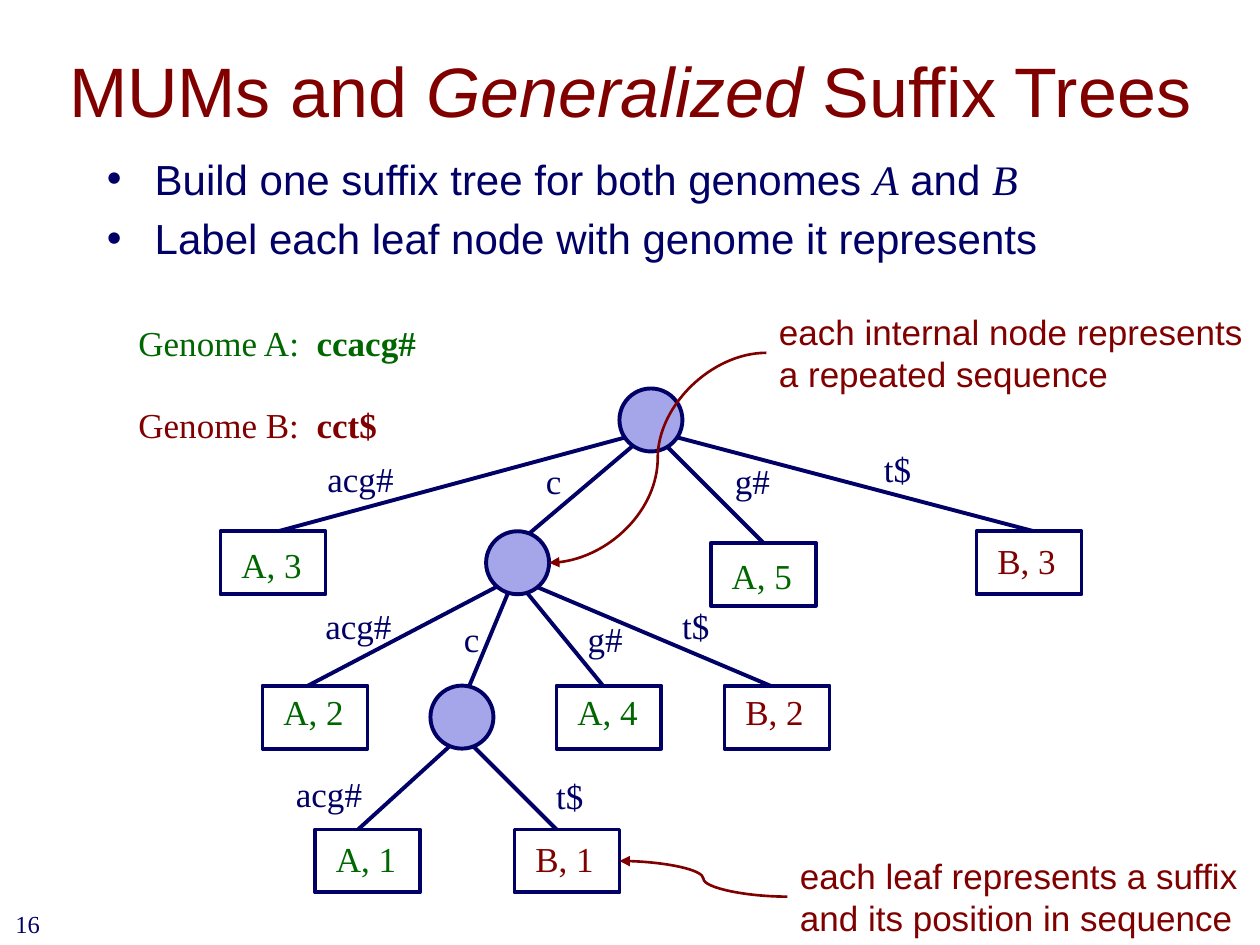
"""Build a slide showing a generalized suffix tree for two genomes."""
from lxml import etree
from pptx import Presentation, util as u
from pptx.dml.color import RGBColor
from pptx.enum import shapes, text
from pptx.oxml.ns import qn

COLORS = {"navy": "000066", "maroon": "800000", "green": "006600",
          "node": "A5A5E9", "white": "FFFFFF"}
COLORS = {name: RGBColor.from_string(value) for name, value in COLORS.items()}
SANS, SERIF = "Arial", "Times New Roman"

presentation = Presentation()
presentation.slide_width, presentation.slide_height = u.Inches(10), u.Inches(7.5)
CELL = presentation.slide_width / 120
slide = presentation.slides.add_slide(presentation.slide_layouts[5])


def add_text(paragraphs, left, top, width, height, color, font=SERIF, size=20, shape=None):
    """Write paragraphs of (words, style) runs, placed in grid cells."""
    box = [int(value * CELL) for value in (left, top, width, height)]
    if shape is None:
        shape = slide.shapes.add_textbox(*box)
        shape.text_frame.word_wrap = False
        shape.text_frame.auto_size = text.MSO_AUTO_SIZE.SHAPE_TO_FIT_TEXT
    shape.left, shape.top, shape.width, shape.height = box
    frame = shape.text_frame
    for index, runs in enumerate(paragraphs):
        paragraph = frame.add_paragraph() if index else frame.paragraphs[0]
        for words, style in runs:
            run = paragraph.add_run()
            run.text = words
            run.font.size = u.Pt(size)
            run.font.color.rgb = COLORS[color]
            run.font.name = SERIF if style == "variable" else font
            run.font.italic = style in ("italic", "variable")
            run.font.bold = style == "bold"
    return frame


def add_line(kind, start, end, color, width):
    """Connect two grid points."""
    line = slide.shapes.add_connector(kind, *[int(value * CELL) for value in (*start, *end)])
    line.line.color.rgb = COLORS[color]
    line.line.width = u.Pt(width)
    etree.SubElement(line._element.spPr, qn("a:effectLst"))
    return line


title = add_text([[("MUMs and ", ""), ("Generalized", "italic"), (" Suffix Trees", "")]],
                 5, 1, 110, 15, "maroon", SANS, 40, slide.shapes.title)
title.vertical_anchor = text.MSO_ANCHOR.MIDDLE
title.paragraphs[0].alignment = text.PP_ALIGN.CENTER

body = add_text([[("Build one suffix tree for both genomes ", ""), ("A", "variable"),
                  (" and ", ""), ("B", "variable")],
                 [("Label each leaf node with genome it represents", "")]],
                9, 14, 102, 16, "navy", SANS, 24)
body.word_wrap = True
body.auto_size = text.MSO_AUTO_SIZE.NONE
for paragraph in body.paragraphs:
    paragraph.space_before = u.Pt(5)
    properties = paragraph._p.get_or_add_pPr()
    properties.set("marL", str(u.Inches(0.38)))
    properties.set("indent", str(-u.Inches(0.38)))
    etree.SubElement(properties, qn("a:buFont"), typeface=SANS)
    etree.SubElement(properties, qn("a:buChar"), char="•")

ROOT, MIDDLE, LOWER = (62, 41), (49, 55), (44, 70)
LABEL_WIDTHS = {"acg#": 8.8, "c": 3.8, "g#": 5.8, "t$": 5}
edges = [
    (ROOT, (25, 51), "acg#", 30, 43), (ROOT, (49, 52), "c", 50.8, 43.2),
    (ROOT, (73, 52), "g#", 68.8, 43.2), (ROOT, (100, 51), "t$", 83, 42),
    (MIDDLE, (28, 66), "acg#", 29.8, 57), (MIDDLE, (44, 67), "c", 43, 58.2),
    (MIDDLE, (58, 66), "g#", 54.8, 58.2), (MIDDLE, (75, 66), "t$", 63.8, 57),
    (LOWER, (33, 80), "acg#", 27, 73), (LOWER, (54, 80), "t$", 51.8, 73.2)]
leaves = [
    ("A, 3", 21, 50.6, 0.6), ("A, 5", 67.7, 51.7, 0.5), ("B, 3", 93, 50.6, 0.2),
    ("A, 2", 25, 65.3, -0.1), ("A, 4", 53, 65.3, -0.1), ("B, 2", 69, 65.3, -0.1),
    ("A, 1", 30, 79, 0.2), ("B, 1", 49, 79, 0.2)]

for start, end, *_ in edges:
    add_line(shapes.MSO_CONNECTOR.STRAIGHT, start, end, "navy", 2.25)

nodes = [(shapes.MSO_SHAPE.OVAL, left, top, 6, "node")
         for left, top in ((59, 37), (46.3, 50.6), (41, 65.3))]
nodes += [(shapes.MSO_SHAPE.RECTANGLE, left, top, 10, "white") for _, left, top, _ in leaves]
for kind, left, top, width, fill in nodes:
    shape = slide.shapes.add_shape(kind, *[int(value * CELL) for value in (left, top, width, 6)])
    shape.shadow.inherit = False
    shape.fill.solid()
    shape.fill.fore_color.rgb = COLORS[fill]
    shape.line.color.rgb = COLORS["navy"]
    shape.line.width = u.Pt(2.25)

for _, _, label, left, top in edges:
    add_text([[(label, "")]], left, top, LABEL_WIDTHS[label], 5.2, "navy")
for label, left, top, drop in leaves:
    color, width = ("green", 8.3) if label.startswith("A") else ("maroon", 8)
    add_text([[(label, "")]], left + 0.8, top + drop, width, 5.2, color)

for name, sequence, top, width, color in (("A", "ccacg#", 30, 28.9, "green"),
                                          ("B", "cct$", 37.8, 25.1, "maroon")):
    add_text([[(f"Genome {name}:  ", ""), (sequence, "bold")]], 12, top, width, 5.2, color)

notes = [
    ("each internal node represents", "a repeated sequence", 73, 29, 46.9, (73, 33.6), (52.3, 53.6)),
    ("each leaf represents a suffix", "and its position in sequence", 75, 80.8, 44.5, (75, 85.4), (59, 82))]
for first, second, left, top, width, start, end in notes:
    add_text([[(first, "")], [(second, "")]], left, top, width, 9.2, "maroon", SANS)
    arrow = add_line(shapes.MSO_CONNECTOR.CURVE, start, end, "maroon", 1.5)
    etree.SubElement(arrow.line._get_or_add_ln(), qn("a:tailEnd"), type="triangle")

number = add_text([[("16", "")]], 0, 86, 5, 4, "navy", size=14)
number.word_wrap = True
number.auto_size = text.MSO_AUTO_SIZE.NONE
number.paragraphs[0].alignment = text.PP_ALIGN.RIGHT

presentation.save("out.pptx")
